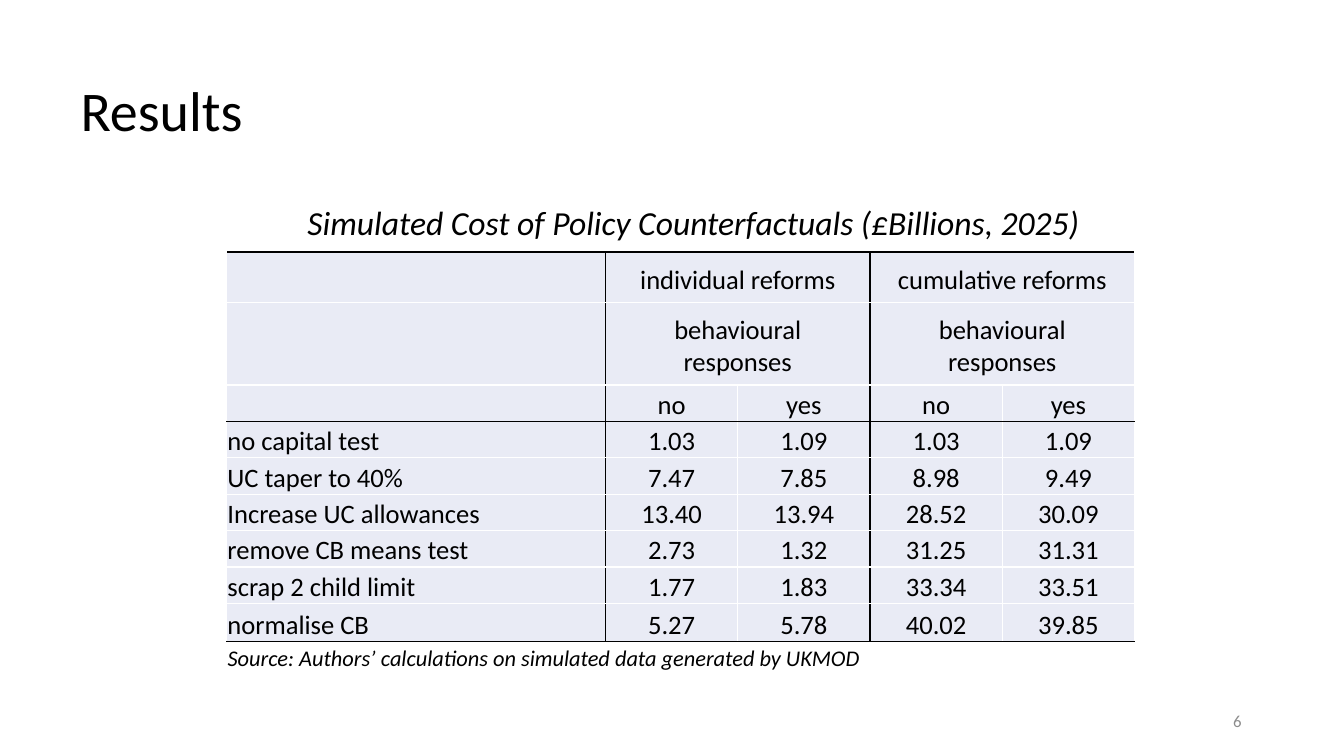
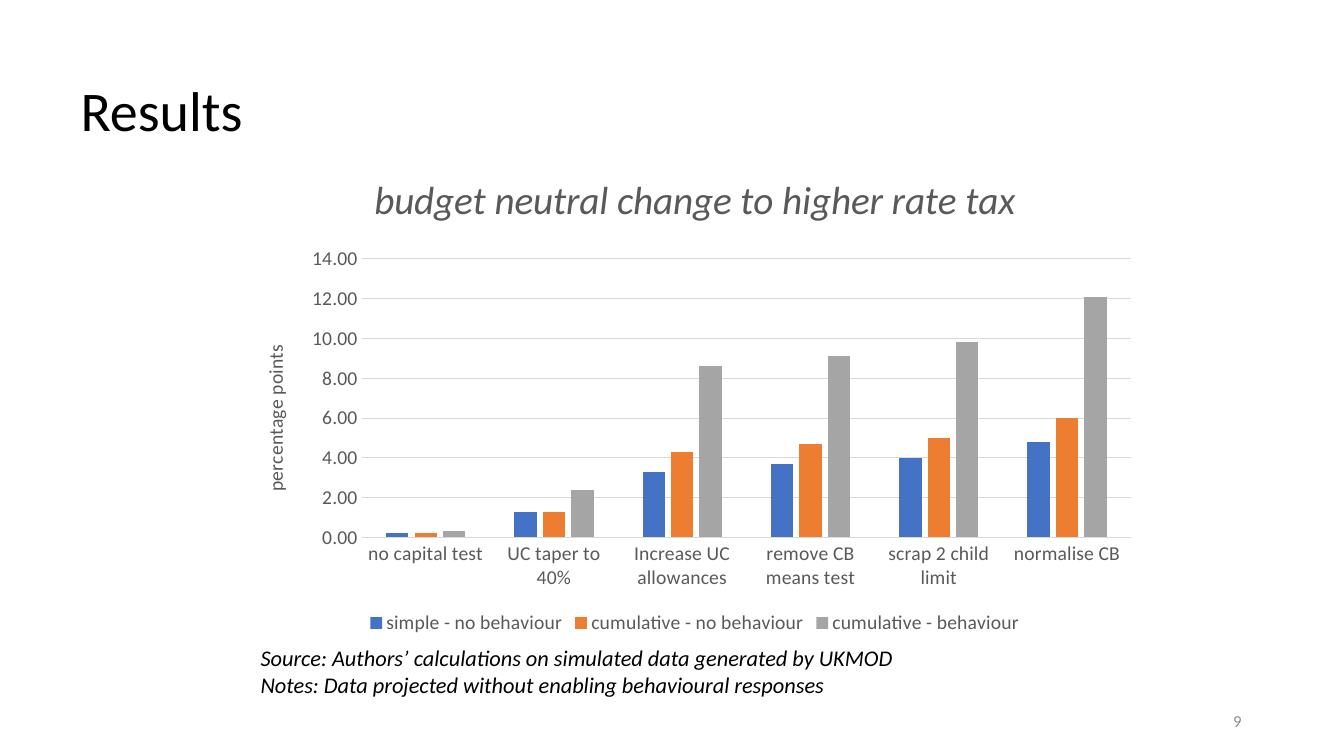
from lxml import etree
from pptx import Presentation
from pptx.chart import data
from pptx.dml.color import RGBColor
from pptx.enum import chart as ch, text
from pptx.oxml import ns
from pptx.util import Pt

FONT = "Calibri"
COLORS = {"ink": "000000", "grey": "595959", "number": "8C8C8C", "rule": "D9D9D9",
          "cell": "E9EBF5", "gap": "FFFFFF"}
SERIES_COLORS = ["4472C4", "ED7D31", "A5A5A5"]

TITLE = "Results"
SOURCE = "Source: Authors’ calculations on simulated data generated by UKMOD"
NOTES = "Notes: Data projected without enabling behavioural responses"
REFORMS = ["no capital test", "UC taper to 40%", "Increase UC allowances",
           "remove CB means test", "scrap 2 child limit", "normalise CB"]

COST_TITLE = "Simulated Cost of Policy Counterfactuals (£Billions, 2025)"
COST_GROUPS = [["individual reforms", "cumulative reforms"],
               ["behavioural responses", "behavioural responses"]]
COST_HEADS = ["", "no", "yes", "no", "yes"]
COSTS = [["1.03", "1.09", "1.03", "1.09"],
         ["7.47", "7.85", "8.98", "9.49"],
         ["13.40", "13.94", "28.52", "30.09"],
         ["2.73", "1.32", "31.25", "31.31"],
         ["1.77", "1.83", "33.34", "33.51"],
         ["5.27", "5.78", "40.02", "39.85"]]
COLUMN_WIDTHS = [270.5] + [94.5] * 4
ROW_HEIGHTS = [36, 59] + [26] * 6 + [27]
DARK_COLUMN_EDGES = {1, 3}
DARK_ROW_EDGES = {0, 3, 9}

TAX_TITLE = "budget neutral change to higher rate tax"
TAX_UNIT = "percentage points"
TAX_CHANGES = {
    "simple - no behaviour": [0.2, 1.3, 3.3, 3.7, 4, 4.8],
    "cumulative - no behaviour": [0.2, 1.3, 4.3, 4.7, 5, 6],
    "cumulative - behaviour": [0.3, 2.4, 8.6, 9.1, 9.8, 12.1],
}


def rgb(name):
    return RGBColor.from_string(COLORS[name])


def style(font, size, color="ink", italic=False):
    font.name, font.size, font.italic, font.bold = FONT, Pt(size), italic, False
    font.color.rgb = rgb(color)


def add_text(slide, box, lines, size, color="ink", italic=False, wrap=False,
             align=text.PP_ALIGN.LEFT, anchor=text.MSO_ANCHOR.TOP, spacing=None):
    frame = slide.shapes.add_textbox(*map(Pt, box)).text_frame
    frame.word_wrap, frame.vertical_anchor = wrap, anchor
    frame.text = "\n".join(lines)
    for paragraph in frame.paragraphs:
        paragraph.alignment, paragraph.line_spacing = align, spacing
        style(paragraph.font, size, color, italic)


def add_page(deck, number):
    slide = deck.slides.add_slide(deck.slide_layouts[6])
    middle = text.MSO_ANCHOR.MIDDLE
    add_text(slide, (50.5, 29, 828, 104), [TITLE], 40, wrap=True, anchor=middle, spacing=0.9)
    add_text(slide, (859, 500.5, 35, 29), [str(number)], 12, "number", wrap=True,
             align=text.PP_ALIGN.RIGHT, anchor=middle)
    return slide


def set_borders(cell, row, column, span):
    edges = [("L", column in DARK_COLUMN_EDGES), ("R", column + span in DARK_COLUMN_EDGES),
             ("T", row in DARK_ROW_EDGES), ("B", row + 1 in DARK_ROW_EDGES)]
    properties = cell._tc.get_or_add_tcPr()
    for position, (side, dark) in enumerate(edges):
        line = etree.Element(ns.qn("a:ln" + side), w=str(Pt(1)))
        fill = etree.SubElement(line, ns.qn("a:solidFill"))
        etree.SubElement(fill, ns.qn("a:srgbClr"), val=COLORS["ink" if dark else "gap"])
        properties.insert(position, line)


def add_cost_table(slide):
    rows = [["", first, "", second, ""] for first, second in COST_GROUPS]
    rows += [COST_HEADS] + [[name] + costs for name, costs in zip(REFORMS, COSTS)]
    table = slide.shapes.add_table(len(rows), len(COLUMN_WIDTHS), Pt(162), Pt(180),
                                   Pt(sum(COLUMN_WIDTHS)), Pt(sum(ROW_HEIGHTS))).table
    for column, width in zip(table.columns, COLUMN_WIDTHS):
        column.width = Pt(width)
    for row, height in zip(table.rows, ROW_HEIGHTS):
        row.height = Pt(height)
    for r, row in enumerate(rows):
        grouped = r < len(COST_GROUPS)
        for c, entry in enumerate(row):
            cell = table.cell(r, c)
            span = 2 if grouped and c in DARK_COLUMN_EDGES else 1
            if span == 2:
                cell.merge(table.cell(r, c + 1))
            cell.text = entry
            cell.vertical_anchor = text.MSO_ANCHOR.BOTTOM
            cell.margin_left = cell.margin_right = Pt(9.5 if grouped else 0.5)
            cell.margin_top = Pt(4.5 if grouped else 0.5)
            cell.margin_bottom = Pt(4.5 if grouped else 0)
            paragraph = cell.text_frame.paragraphs[0]
            paragraph.alignment = text.PP_ALIGN.CENTER if c else text.PP_ALIGN.LEFT
            style(paragraph.font, 19)
            cell.fill.solid()
            cell.fill.fore_color.rgb = rgb("cell")
            set_borders(cell, r, c, span)


def set_heading(frame, words, size, italic=False):
    frame.text = words
    style(frame.paragraphs[0].font, size, "grey", italic)


def add_tax_chart(slide):
    changes = data.CategoryChartData(number_format="0.00")
    changes.categories = REFORMS
    for name, values in TAX_CHANGES.items():
        changes.add_series(name, values)
    chart = slide.shapes.add_chart(ch.XL_CHART_TYPE.COLUMN_CLUSTERED, Pt(171.5), Pt(108),
                                   Pt(649.5), Pt(348.5), changes).chart
    style(chart.font, 14, "grey")
    chart.has_title = True
    set_heading(chart.chart_title.text_frame, TAX_TITLE, 28, True)
    chart.chart_title.include_in_layout = False
    chart.has_legend = True
    chart.legend.position = ch.XL_LEGEND_POSITION.BOTTOM
    chart.legend.include_in_layout = False
    style(chart.legend.font, 14, "grey")

    plot = chart.plots[0]
    plot.gap_width, plot.overlap, plot.vary_by_categories = 219, -27, False
    for series, color in zip(plot.series, SERIES_COLORS):
        series.format.fill.solid()
        series.format.fill.fore_color.rgb = RGBColor.from_string(color)
        series.invert_if_negative = False

    reforms, points = chart.category_axis, chart.value_axis
    for axis in (reforms, points):
        axis.major_tick_mark = axis.minor_tick_mark = ch.XL_TICK_MARK.NONE
        style(axis.tick_labels.font, 14, "grey")
    points.minimum_scale, points.maximum_scale, points.major_unit = 0, 14, 2
    points.tick_labels.number_format = "0.00"
    points.tick_labels.number_format_is_linked = False
    points.format.line.fill.background()
    for line in (reforms.format.line, points.major_gridlines.format.line):
        line.width = Pt(0.75)
        line.color.rgb = rgb("rule")
    unit = points.axis_title.text_frame
    set_heading(unit, TAX_UNIT, 14)
    unit._txBody.bodyPr.set("rot", "-5400000")
    unit._txBody.bodyPr.set("vert", "horz")


def main():
    deck = Presentation()
    deck.slide_width, deck.slide_height = Pt(960), Pt(540)

    costs = add_page(deck, 6)
    add_cost_table(costs)
    add_text(costs, (212.5, 140.5, 571.5, 36), [COST_TITLE], 24, italic=True)
    add_text(costs, (155.5, 456.5, 472.5, 46), [SOURCE], 16, italic=True)

    taxes = add_page(deck, 9)
    add_text(taxes, (179, 456.5, 472.5, 46), [SOURCE, NOTES], 16, italic=True)
    add_tax_chart(taxes)

    deck.save("out.pptx")


if __name__ == "__main__":
    main()
